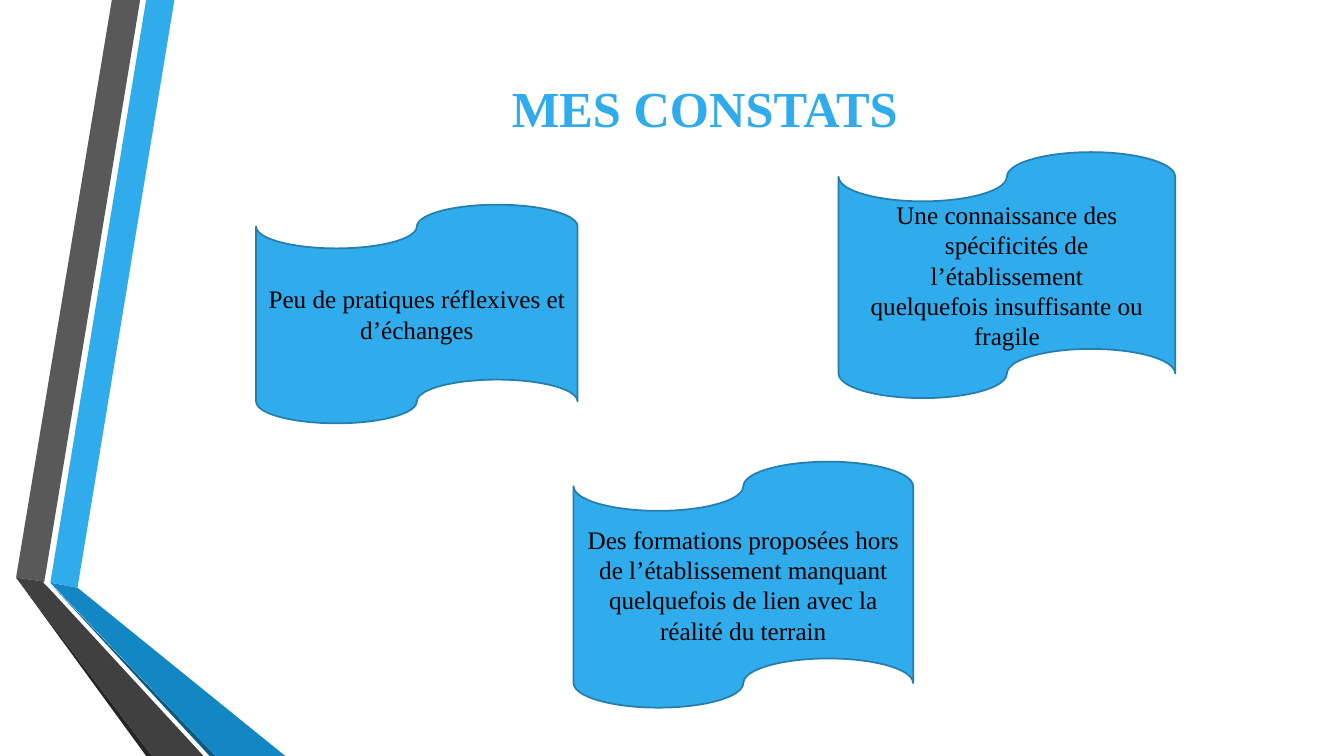
"""Build the "Mes constats" slide: a folded ribbon and three punched-tape cards."""

from dataclasses import dataclass

from pptx import Presentation
from pptx.dml.color import RGBColor
from pptx.enum.shapes import MSO_SHAPE
from pptx.enum.text import MSO_ANCHOR, PP_ALIGN
from pptx.slide import Slide
from pptx.text.text import TextFrame
from pptx.util import Pt


@dataclass(frozen=True)
class Theme:
    blue: str = "30ACEC"
    blue_outline: str = "247FAF"
    blue_fold: str = "1287C3"
    blue_shade: str = "0C5A82"
    gray: str = "595959"
    gray_fold: str = "404040"
    gray_shade: str = "262626"
    black: str = "000000"
    font: str = "Times New Roman"
    title_size: float = 36
    card_size: float = 18
    outline_width: float = 1.25


@dataclass(frozen=True)
class Box:
    left: float
    top: float
    width: float
    height: float

    def lengths(self) -> tuple[Pt, ...]:
        return tuple(Pt(value) for value in (self.left, self.top, self.width, self.height))


@dataclass(frozen=True)
class Band:
    color: str
    points: tuple[tuple[float, float], ...]


@dataclass(frozen=True)
class Card:
    box: Box
    text: str
    indents: tuple[float, ...] = ()


THEME = Theme()
SLIDE_WIDTH, SLIDE_HEIGHT = 960, 540
TITLE_BOX = Box(157, 44.6, 702, 64.1)

BANDS = (
    Band(THEME.blue, ((36, 416.2), (55.4, 419.8), (124.6, 0), (104.4, 0))),
    Band(THEME.gray, ((100.1, 0), (79.9, 0), (11.5, 412.6), (31.7, 415.4))),
    Band(THEME.gray_shade, ((11.5, 412.6), (104.4, SLIDE_HEIGHT), (108.7, SLIDE_HEIGHT))),
    Band(THEME.blue_shade, ((36, 416.9), (149.8, SLIDE_HEIGHT), (154.1, SLIDE_HEIGHT))),
    Band(THEME.blue_fold, ((36, 416.2), (154.1, SLIDE_HEIGHT), (203.8, SLIDE_HEIGHT),
                           (55.4, 419.8))),
    Band(THEME.gray_fold, ((145.4, SLIDE_HEIGHT), (34.6, 419.8), (31, 416.2), (31.7, 415.4),
                           (11.5, 412.6), (108.7, SLIDE_HEIGHT))),
)

CARDS = (
    Card(Box(182.9, 146.2, 229.7, 156.2), "Peu de pratiques réflexives et d’échanges"),
    Card(
        Box(599, 108.7, 240.5, 175.7),
        "Une connaissance des\n"
        "spécificités de l’établissement\n"
        "quelquefois insuffisante ou fragile",
        indents=(0, 14, 0),
    ),
    Card(
        Box(409.7, 329.8, 242.6, 175.7),
        "Des formations proposées hors de l’établissement manquant "
        "quelquefois de lien avec la réalité du terrain",
    ),
)


def write_text(text_frame: TextFrame, text: str, size: float, color: str, bold: bool) -> None:
    """Write centred text and format its runs."""
    text_frame.text = text
    text_frame.word_wrap = True
    text_frame.vertical_anchor = MSO_ANCHOR.MIDDLE
    for paragraph in text_frame.paragraphs:
        paragraph.alignment = PP_ALIGN.CENTER
        for run in paragraph.runs:
            run.font.name = THEME.font
            run.font.size = Pt(size)
            run.font.bold = bold
            run.font.color.rgb = RGBColor.from_string(color)


def draw_band(slide: Slide, band: Band) -> None:
    """Draw one flat polygon of the ribbon."""
    start, *others = [(Pt(x), Pt(y)) for x, y in band.points]
    builder = slide.shapes.build_freeform(*start)
    builder.add_line_segments(others, close=True)
    shape = builder.convert_to_shape()
    shape.shadow.inherit = False
    shape.fill.solid()
    shape.fill.fore_color.rgb = RGBColor.from_string(band.color)
    shape.line.fill.background()


def draw_title(slide: Slide, text: str) -> None:
    """Draw the slide title."""
    shape = slide.shapes.add_textbox(*TITLE_BOX.lengths())
    write_text(shape.text_frame, text, THEME.title_size, THEME.blue, bold=True)


def draw_card(slide: Slide, card: Card) -> None:
    """Draw one punched-tape card with its statement."""
    shape = slide.shapes.add_shape(MSO_SHAPE.FLOWCHART_PUNCHED_TAPE, *card.box.lengths())
    shape.shadow.inherit = False
    shape.fill.solid()
    shape.fill.fore_color.rgb = RGBColor.from_string(THEME.blue)
    shape.line.color.rgb = RGBColor.from_string(THEME.blue_outline)
    shape.line.width = Pt(THEME.outline_width)
    write_text(shape.text_frame, card.text, THEME.card_size, THEME.black, bold=False)
    for paragraph, indent in zip(shape.text_frame.paragraphs, card.indents):
        paragraph._p.get_or_add_pPr().set("indent", str(Pt(indent)))


def main() -> None:
    """Build and save the presentation."""
    presentation = Presentation()
    presentation.slide_width = Pt(SLIDE_WIDTH)
    presentation.slide_height = Pt(SLIDE_HEIGHT)
    slide = presentation.slides.add_slide(presentation.slide_layouts[6])
    for band in BANDS:
        draw_band(slide, band)
    draw_title(slide, "MES CONSTATS ")
    for card in CARDS:
        draw_card(slide, card)
    presentation.save("out.pptx")


if __name__ == "__main__":
    main()
